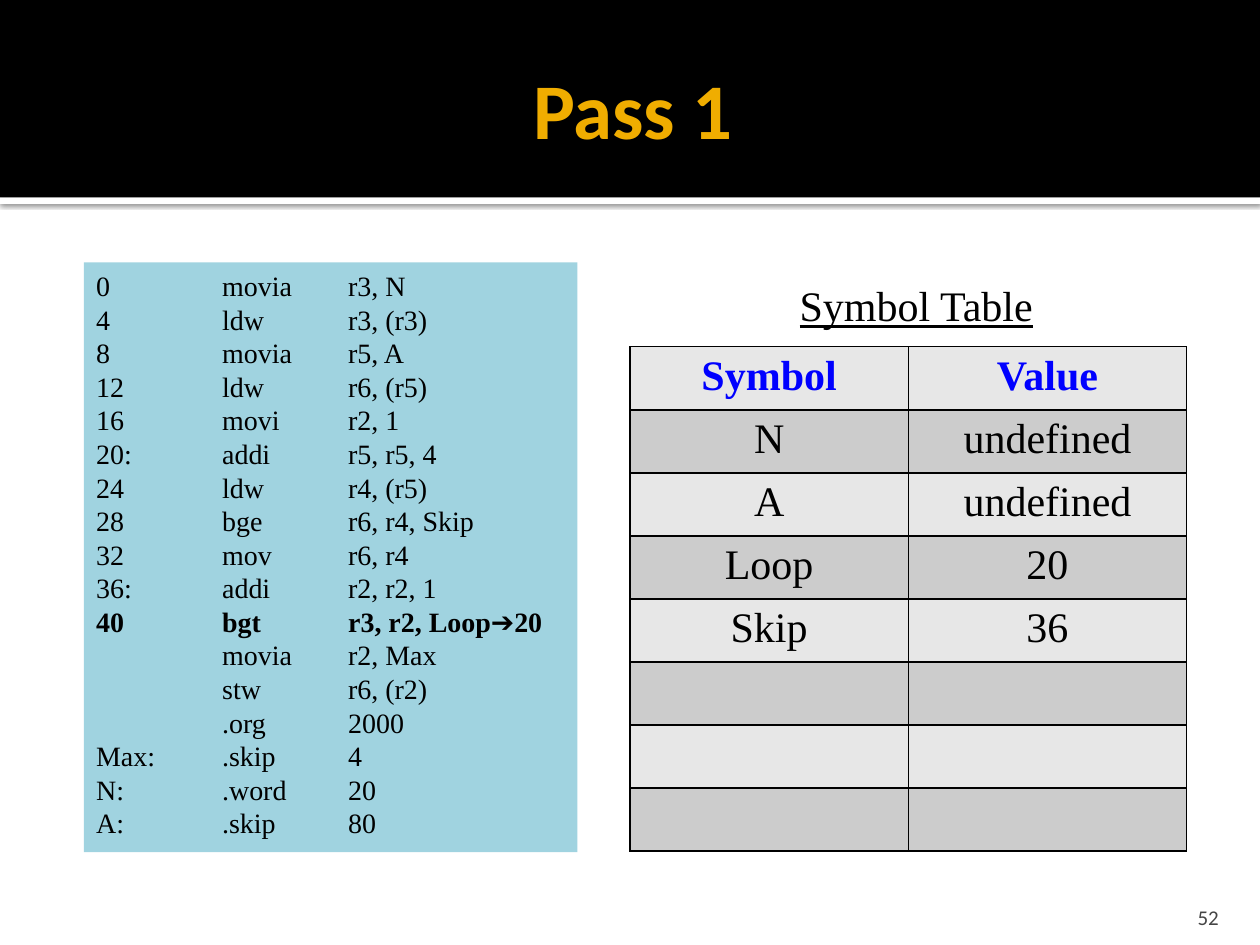
import dataclasses
import pptx
import pptx.dml.color
import pptx.enum.shapes
import pptx.enum.text
import pptx.oxml
import pptx.oxml.ns
import pptx.util

Cm = pptx.util.Cm
Pt = pptx.util.Pt
Align = pptx.enum.text.PP_ALIGN
Anchor = pptx.enum.text.MSO_ANCHOR
NAMESPACE = pptx.oxml.ns.nsdecls("a")


@dataclasses.dataclass(frozen=True)
class Theme:
    white: str = "FFFFFF"
    black: str = "000000"
    gold: str = "F0AD00"
    gray: str = "454545"
    panel: str = "A0D3E0"
    heading: str = "0000FF"
    bands: tuple = ("E7E7E7", "CCCCCC")
    sans: str = "Calibri"
    serif: str = "Times New Roman"
    symbol: str = "Arial"
    title_size: float = 45
    table_size: float = 24
    code_size: float = 16
    code_leading: float = 19.2
    number_size: float = 12


THEME = Theme()

TAB_WIDTH = 2.54
CODE = [
    ("0", "movia", "r3, N"),
    ("4", "ldw", "r3, (r3)"),
    ("8", "movia", "r5, A"),
    ("12", "ldw", "r6, (r5)"),
    ("16", "movi", "r2, 1"),
    ("20:", "addi", "r5, r5, 4"),
    ("24", "ldw", "r4, (r5)"),
    ("28", "bge", "r6, r4, Skip"),
    ("32", "mov", "r6, r4"),
    ("36:", "addi", "r2, r2, 1"),
    ("40", "bgt", "r3, r2, Loop➔20"),
    ("", "movia", "r2, Max"),
    ("", "stw", "r6, (r2)"),
    ("", ".org", "2000"),
    ("Max:", ".skip", "4"),
    ("N:", ".word", "20"),
    ("A:", ".skip", "80"),
]
CURRENT_ADDRESS = "40"
SYMBOLS = [
    ("Symbol", "Value"),
    ("N", "undefined"),
    ("A", "undefined"),
    ("Loop", "20"),
    ("Skip", "36"),
    ("", ""),
    ("", ""),
    ("", ""),
]


def set_attributes(target, values):
    for name, value in values.items():
        setattr(target, name, value)


def paint(fill, color):
    fill.solid()
    fill.fore_color.rgb = pptx.dml.color.RGBColor.from_string(color)


def add_span(para, text, size, color, name, **styles):
    span = para.add_run()
    span.text = text
    set_attributes(span.font, {"size": Pt(size), "name": name, **styles})
    span.font.color.rgb = pptx.dml.color.RGBColor.from_string(color)


def add_panel(page, box, color):
    shape = page.shapes.add_shape(
        pptx.enum.shapes.MSO_SHAPE.RECTANGLE, *map(Cm, box))
    shape.shadow.inherit = False
    paint(shape.fill, color)
    shape.line.fill.background()
    return shape


def add_label(page, box, text, align, anchor, margins, *style, **styles):
    frame = page.shapes.add_textbox(*map(Cm, box)).text_frame
    sides = ("margin_left", "margin_top", "margin_right", "margin_bottom")
    set_attributes(frame, {"word_wrap": True, "vertical_anchor": anchor,
                           **dict(zip(sides, map(Cm, margins)))})
    para = frame.paragraphs[0]
    para.alignment = align
    add_span(para, text, *style, **styles)


def add_header(page, box):
    left, top, width, height = box
    strip = add_panel(page, (left, top + height, width, 0.13), THEME.white)
    effects = strip._element.spPr.find(pptx.oxml.ns.qn("a:effectLst"))
    effects.append(pptx.oxml.parse_xml(
        f'<a:outerShdw {NAMESPACE} blurRad="{Pt(2.5)}" dist="{Pt(0.8)}" '
        'dir="5400000" algn="tl" rotWithShape="0">'
        f'<a:srgbClr val="{THEME.black}"><a:alpha val="60000"/></a:srgbClr>'
        '</a:outerShdw>'))
    add_panel(page, box, THEME.black)
    add_label(page, (left + 1.27, top + 0.43, width - 2.54, 3.48), "Pass 1",
              Align.CENTER, Anchor.MIDDLE, (0.25, 0.13, 0.13, 0.13),
              THEME.title_size, THEME.gold, THEME.sans, bold=True)


def add_tab_stops(para, count):
    stops = "".join(f'<a:tab pos="{Cm(TAB_WIDTH * number)}" algn="l"/>'
                    for number in range(1, count + 1))
    para._p.get_or_add_pPr().append(
        pptx.oxml.parse_xml(f'<a:tabLst {NAMESPACE}>{stops}</a:tabLst>'))


def add_code(page, box):
    frame = add_panel(page, box, THEME.panel).text_frame
    set_attributes(frame, {"word_wrap": True, "vertical_anchor": Anchor.TOP})
    for index, fields in enumerate(CODE):
        para = frame.add_paragraph() if index else frame.paragraphs[0]
        set_attributes(para, {"alignment": Align.LEFT,
                              "line_spacing": Pt(THEME.code_leading)})
        add_tab_stops(para, len(fields) - 1)
        bold = fields[0] == CURRENT_ADDRESS
        before, arrow, after = "\t".join(fields).partition("➔")
        for text, name, weight in ((before, THEME.serif, bold),
                                   (arrow, THEME.symbol, False),
                                   (after, THEME.serif, bold)):
            if text:
                add_span(para, text, THEME.code_size, THEME.black, name,
                         bold=weight)


def add_borders(cell):
    properties = cell._tc.get_or_add_tcPr()
    for index, side in enumerate(("lnL", "lnR", "lnT", "lnB")):
        properties.insert(index, pptx.oxml.parse_xml(
            f'<a:{side} {NAMESPACE} w="{Pt(1)}"><a:solidFill>'
            f'<a:srgbClr val="{THEME.black}"/></a:solidFill></a:{side}>'))


def add_symbols(page, box):
    left, top, width, height = box
    add_label(page, (left + 3.17, top, 5.26, 1.27), "Symbol Table",
              Align.LEFT, Anchor.TOP, (0.25, 0.13, 0.25, 0.13),
              THEME.table_size, THEME.black, THEME.serif, underline=True)
    offset = 1.48
    table = page.shapes.add_table(
        len(SYMBOLS), len(SYMBOLS[0]),
        *map(Cm, (left, top + offset, width, height - offset))).table
    for row, values in enumerate(SYMBOLS):
        header = row == 0
        for column, text in enumerate(values):
            cell = table.cell(row, column)
            paint(cell.fill, THEME.bands[row % 2])
            add_borders(cell)
            para = cell.text_frame.paragraphs[0]
            para.alignment = Align.CENTER
            if text:
                add_span(para, text, THEME.table_size,
                         THEME.heading if header else THEME.black,
                         THEME.serif, bold=header)


def add_number(page, box):
    add_label(page, box, "52", Align.RIGHT, Anchor.BOTTOM,
              (0.25, 0.13, 0.25, 0), THEME.number_size, THEME.gray, THEME.sans)


def main():
    deck = pptx.Presentation()
    set_attributes(deck, {"slide_width": Cm(25.4), "slide_height": Cm(19.05)})
    page = deck.slides.add_slide(deck.slide_layouts[6])
    paint(page.background.fill, THEME.white)
    add_header(page, (0, 0, 25.4, 3.98))
    add_number(page, (22.79, 17.99, 2.03, 0.76))
    add_code(page, (1.69, 5.29, 9.95, 11.89))
    add_symbols(page, (12.7, 5.51, 11.22, 11.65))
    deck.save("out.pptx")


if __name__ == "__main__":
    main()
